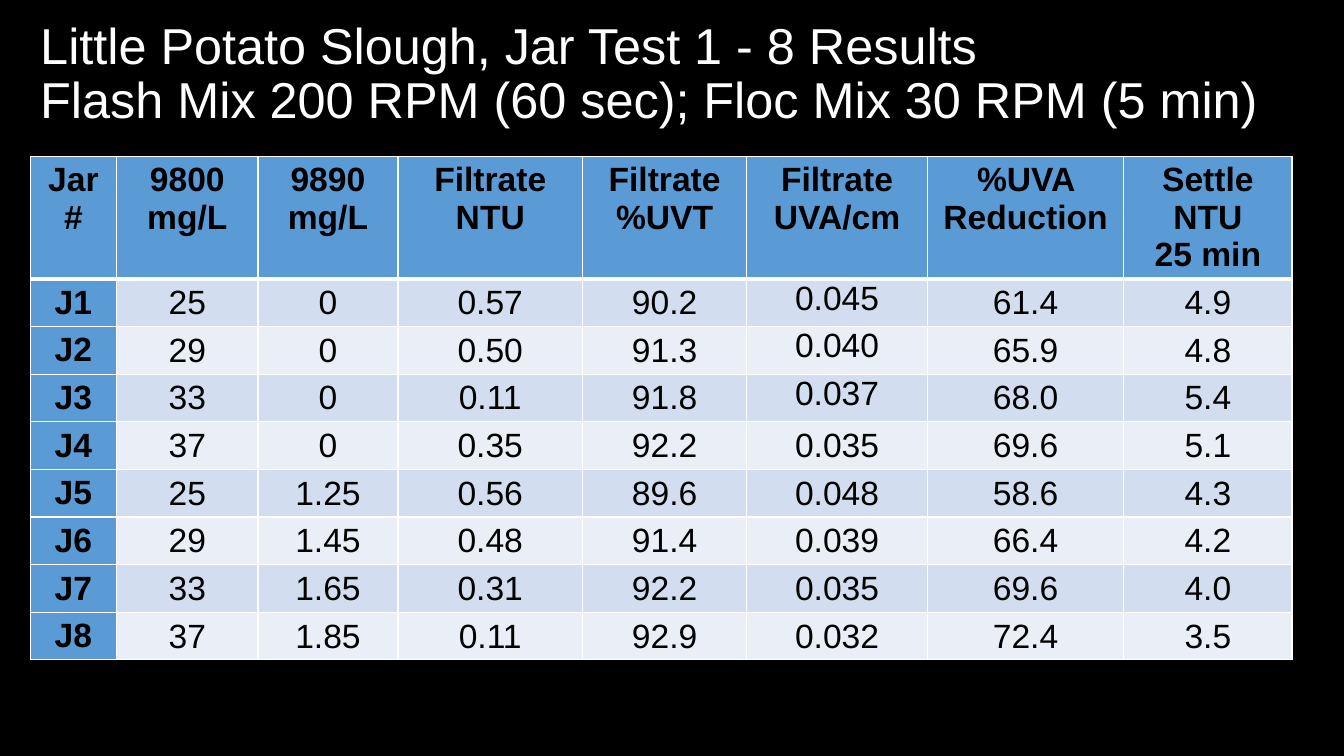
from dataclasses import astuple, dataclass

import pptx
import pptx.dml.color
import pptx.enum.text
import pptx.oxml
import pptx.oxml.ns
import pptx.slide
import pptx.table
import pptx.util

Cm = pptx.util.Cm
Pt = pptx.util.Pt
RGBColor = pptx.dml.color.RGBColor
Anchor = pptx.enum.text.MSO_ANCHOR
Align = pptx.enum.text.PP_ALIGN

BLACK = RGBColor(0x00, 0x00, 0x00)
WHITE = RGBColor(0xFF, 0xFF, 0xFF)
BLUE = RGBColor(0x5B, 0x9B, 0xD5)
BANDS = (RGBColor(0xD2, 0xDE, 0xEF), RGBColor(0xEA, 0xEF, 0xF7))
FONT = "Arial"

TITLE = (
    "Little Potato Slough, Jar Test 1 - 8 Results\v"
    "Flash Mix 200 RPM (60 sec); Floc Mix 30 RPM (5 min)"
)
HEADS = (
    "Jar\v#", "9800\nmg/L", "9890\nmg/L", "Filtrate\nNTU", "Filtrate\n%UVT",
    "Filtrate\nUVA/cm", "%UVA Reduction", "Settle\nNTU\n25 min",
)
WIDTHS = (2.18, 3.56, 3.53, 4.65, 4.14, 4.55, 4.95, 4.24)
HEAD_HIGH = 3.08
JAR_HIGH = 1.2
UVA_COL = 5
TOP_JARS = 3  # jars whose UVA/cm value sits at the top of its cell


@dataclass
class Jar:
    name: str
    dose_9800: str
    dose_9890: str
    ntu: str
    uvt: str
    uva: str
    cut: str
    settle: str


JARS = (
    Jar("J1", "25", "0", "0.57", "90.2", "0.045", "61.4", "4.9"),
    Jar("J2", "29", "0", "0.50", "91.3", "0.040", "65.9", "4.8"),
    Jar("J3", "33", "0", "0.11", "91.8", "0.037", "68.0", "5.4"),
    Jar("J4", "37", "0", "0.35", "92.2", "0.035", "69.6", "5.1"),
    Jar("J5", "25", "1.25", "0.56", "89.6", "0.048", "58.6", "4.3"),
    Jar("J6", "29", "1.45", "0.48", "91.4", "0.039", "66.4", "4.2"),
    Jar("J7", "33", "1.65", "0.31", "92.2", "0.035", "69.6", "4.0"),
    Jar("J8", "37", "1.85", "0.11", "92.9", "0.032", "72.4", "3.5"),
)


def add_title(slide: pptx.slide.Slide) -> None:
    title = slide.shapes.title
    title.left, title.top = Cm(0.76), Cm(0.28)
    title.width, title.height = Cm(32.82), Cm(3.23)
    frame = title.text_frame
    frame.text = TITLE
    frame.word_wrap = True
    frame.auto_size = pptx.enum.text.MSO_AUTO_SIZE.NONE
    frame.vertical_anchor = Anchor.MIDDLE
    line = frame.paragraphs[0]
    line.alignment = Align.LEFT
    line.line_spacing = 0.9
    line.font.name = FONT
    line.font.size = Pt(36)
    line.font.color.rgb = WHITE


def add_edges(cell: pptx.table._Cell, top: int, base: int) -> None:
    """Draw white borders; top and base are widths in points."""
    props = cell._tc.get_or_add_tcPr()
    edges = {"lnL": 1, "lnR": 1, "lnT": top, "lnB": base}
    for spot, (tag, width) in enumerate(edges.items()):
        edge = pptx.oxml.parse_xml(
            f'<a:{tag} {pptx.oxml.ns.nsdecls("a")} w="{Pt(width)}">'
            f'<a:solidFill><a:srgbClr val="{WHITE}"/></a:solidFill></a:{tag}>'
        )
        props.insert(spot, edge)


def fill_cell(cell: pptx.table._Cell, text: str, color: RGBColor, bold: bool) -> None:
    cell.text = text
    cell.fill.solid()
    cell.fill.fore_color.rgb = color
    for line in cell.text_frame.paragraphs:
        line.alignment = Align.CENTER
        line.font.name = FONT
        line.font.size = Pt(24)
        line.font.bold = bold
        line.font.color.rgb = BLACK


def add_jars(slide: pptx.slide.Slide) -> None:
    rows = (HEADS, *(astuple(jar) for jar in JARS))
    high = HEAD_HIGH + JAR_HIGH * len(JARS)
    table = slide.shapes.add_table(
        len(rows), len(HEADS), Cm(0.76), Cm(3.94), Cm(sum(WIDTHS)), Cm(high)
    ).table
    table.first_col = True
    for column, width in zip(table.columns, WIDTHS):
        column.width = Cm(width)
    for r, values in enumerate(rows):
        table.rows[r].height = Cm(JAR_HIGH if r else HEAD_HIGH)
        for c, text in enumerate(values):
            cell = table.cell(r, c)
            label = r == 0 or c == 0
            fill_cell(cell, text, BLUE if label else BANDS[(r - 1) % 2], label)
            add_edges(cell, 3 if r == 1 else 1, 3 if r == 0 else 1)
            if label:
                continue
            cell.margin_left = cell.margin_right = cell.margin_top = Cm(0.02)
            cell.margin_bottom = 0
            high_set = c == UVA_COL and r <= TOP_JARS
            cell.vertical_anchor = Anchor.TOP if high_set else Anchor.MIDDLE


def main() -> None:
    deck = pptx.Presentation()
    deck.slide_width, deck.slide_height = Cm(33.87), Cm(19.05)
    slide = deck.slides.add_slide(deck.slide_layouts[5])
    slide.background.fill.solid()
    slide.background.fill.fore_color.rgb = BLACK
    add_title(slide)
    add_jars(slide)
    deck.save("out.pptx")


if __name__ == "__main__":
    main()
